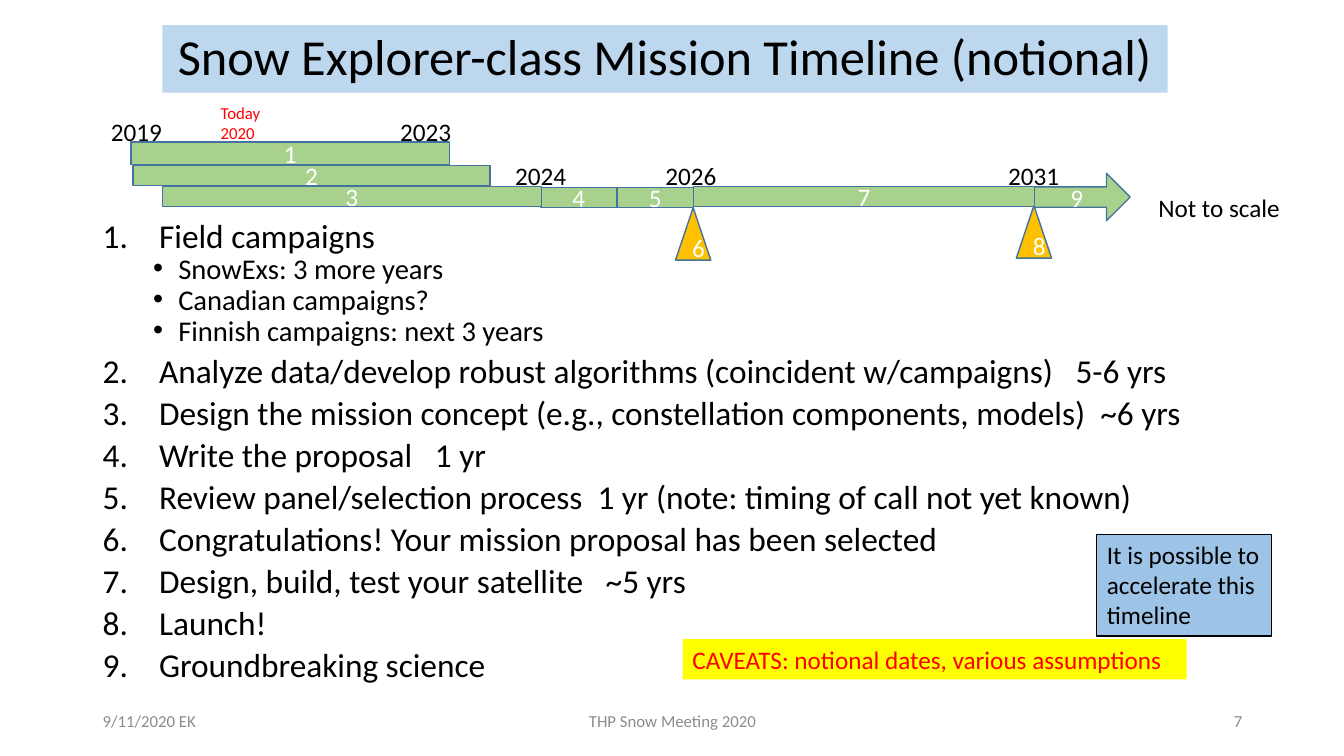
from dataclasses import dataclass

from lxml import etree
from pptx import Presentation
from pptx.dml.color import RGBColor
from pptx.enum.shapes import MSO_SHAPE
from pptx.enum.text import MSO_ANCHOR, MSO_AUTO_SIZE, PP_ALIGN
from pptx.oxml.ns import qn
from pptx.util import Pt

EMU_PER_PX = 9144  # 100 px to the inch
FONT = "Calibri"
BLACK, WHITE, RED, GREY = "000000", "FFFFFF", "FF0000", "8C8C8C"
GREEN, GOLD, OUTLINE = "A9D18E", "FFC000", "43739E"
RECTANGLE = MSO_SHAPE.RECTANGLE
TRIANGLE = MSO_SHAPE.ISOSCELES_TRIANGLE
ARROW = MSO_SHAPE.RIGHT_ARROW
LEFT, CENTER, RIGHT = PP_ALIGN.LEFT, PP_ALIGN.CENTER, PP_ALIGN.RIGHT
MIDDLE, TOP = MSO_ANCHOR.MIDDLE, MSO_ANCHOR.TOP
FIT_SHAPE, FIXED = MSO_AUTO_SIZE.SHAPE_TO_FIT_TEXT, MSO_AUTO_SIZE.NONE


@dataclass
class Box:
    left: int
    top: int
    width: int
    height: int

    def emu(self) -> list[int]:
        return [px(n) for n in (self.left, self.top, self.width, self.height)]


@dataclass
class Phase:
    number: str
    box: Box
    kind: int = RECTANGLE
    fill: str = GREEN


@dataclass
class Label:
    text: str
    box: Box
    size: int = 18
    color: str = BLACK
    align: int = LEFT
    anchor: int = TOP
    wrap: bool = False


@dataclass
class Callout:
    label: Label
    fill: str
    line: str | None = None


@dataclass
class Step:
    text: str
    details: tuple[str, ...] = ()


TITLE = "Snow Explorer-class Mission Timeline (notional)"
PHASES = [
    Phase("2", Box(132, 164, 354, 20)),
    Phase("4", Box(536, 186, 76, 20)),
    Phase("6", Box(670, 206, 35, 52), TRIANGLE, GOLD),
    Phase("8", Box(1008, 204, 35, 52), TRIANGLE, GOLD),
    Phase("9", Box(1025, 172, 96, 47), ARROW),
    Phase("1", Box(130, 141, 316, 22)),
    Phase("3", Box(161, 185, 376, 20)),
    Phase("5", Box(612, 186, 76, 20)),
    Phase("7", Box(688, 185, 338, 20)),
]
YEARS = [("2019", 100, 111), ("2023", 387, 111), ("2024", 501, 154),
         ("2026", 650, 154), ("2031", 990, 154)]
LABELS = [Label(year, Box(left, top, 71, 40)) for year, left, top in YEARS] + [
    Label("Not to scale", Box(1139, 186, 142, 40)),
    Label("Today\n2020", Box(209, 97, 60, 54), 12, RED),
]
FOOTERS = [
    Label(text, Box(left, 695, width, 40), 12, GREY, align, MIDDLE, True)
    for text, left, width, align in (
        ("9/11/2020 EK", 92, 300, LEFT),
        ("THP Snow Meeting 2020", 442, 450, CENTER),
        ("7", 942, 300, RIGHT),
    )
]
CALLOUTS = [
    Callout(Label("It is possible to\naccelerate this\ntimeline",
                  Box(1088, 530, 173, 101)), "9DC3E6", BLACK),
    Callout(Label("CAVEATS: notional dates, various assumptions",
                  Box(677, 634, 500, 40), color=RED, wrap=True), "FFFF00"),
]
STEPS = [
    Step("Field campaigns", ("SnowExs: 3 more years", "Canadian campaigns?",
                             "Finnish campaigns: next 3 years")),
    Step("Analyze data/develop robust algorithms (coincident w/campaigns)   5-6 yrs"),
    Step("Design the mission concept (e.g., constellation components, models)  ~6 yrs"),
    Step("Write the proposal   1 yr"),
    Step("Review panel/selection process  1 yr (note: timing of call not yet known)"),
    Step("Congratulations! Your mission proposal has been selected"),
    Step("Design, build, test your satellite   ~5 yrs"),
    Step("Launch!"),
    Step("Groundbreaking science"),
]


def px(length: int) -> int:
    return length * EMU_PER_PX


def rgb(color: str) -> RGBColor:
    return RGBColor.from_string(color)


def format_text(text_frame, size: float, color: str, align: int) -> None:
    for paragraph in text_frame.paragraphs:
        paragraph.alignment = align
        for run in paragraph.runs:
            run.font.size = Pt(size)
            run.font.name = FONT
            run.font.color.rgb = rgb(color)


def write_label(shape, label: Label) -> None:
    text_frame = shape.text_frame
    text_frame.text = label.text
    text_frame.word_wrap = label.wrap
    text_frame.vertical_anchor = label.anchor
    text_frame.auto_size = FIXED if label.anchor == MIDDLE else FIT_SHAPE
    format_text(text_frame, label.size, label.color, label.align)


def add_label(slide, label: Label) -> None:
    write_label(slide.shapes.add_textbox(*label.box.emu()), label)


def add_filled(slide, kind: int, box: Box, fill: str, line: str | None, weight: float):
    shape = slide.shapes.add_shape(kind, *box.emu())
    shape.shadow.inherit = False
    shape.fill.solid()
    shape.fill.fore_color.rgb = rgb(fill)
    if line:
        shape.line.color.rgb = rgb(line)
        shape.line.width = Pt(weight)
    else:
        shape.line.fill.background()
    return shape


def add_phase(slide, phase: Phase) -> None:
    shape = add_filled(slide, phase.kind, phase.box, phase.fill, OUTLINE, 1)
    if phase.kind == ARROW:
        shape.adjustments[0] = 0.43
    shape.text_frame.text = phase.number
    format_text(shape.text_frame, 18, WHITE, CENTER)


def add_callout(slide, callout: Callout) -> None:
    shape = add_filled(slide, RECTANGLE, callout.label.box, callout.fill, callout.line, 0.75)
    write_label(shape, callout.label)


def add_item(paragraph, text: str, level: int, first: bool) -> None:
    paragraph.text = text
    paragraph.level = level
    paragraph.line_spacing = 0.7
    paragraph.space_before = Pt(0 if first else 5 if level else 10)
    indent, hanging = (75, 25) if level else (56, 56)
    properties = paragraph._p.get_or_add_pPr()
    properties.set("marL", str(px(indent)))
    properties.set("indent", str(-px(hanging)))
    if level:
        etree.SubElement(properties, qn("a:buFont"), typeface="Arial")
        etree.SubElement(properties, qn("a:buChar"), char="•")
    else:
        etree.SubElement(properties, qn("a:buAutoNum"), type="arabicPeriod")
    run = paragraph.runs[0]
    run.font.size = Pt(20.4 if level else 23.8)
    run.font.name = FONT
    run.font.color.rgb = rgb(BLACK)


def add_steps(slide) -> None:
    text_frame = slide.shapes.add_textbox(*Box(92, 219, 1150, 476).emu()).text_frame
    text_frame.word_wrap = True
    items = [(text, level) for step in STEPS
             for level, texts in enumerate(((step.text,), step.details)) for text in texts]
    for index, (text, level) in enumerate(items):
        paragraph = text_frame.add_paragraph() if index else text_frame.paragraphs[0]
        add_item(paragraph, text, level, index == 0)


def format_title(title) -> None:
    title.left, title.top, title.width, title.height = Box(161, 25, 997, 67).emu()
    title.fill.solid()
    title.fill.fore_color.rgb = rgb("BDD7EE")
    title.text_frame.text = TITLE
    title.text_frame.auto_size = FIXED
    title.text_frame.vertical_anchor = MIDDLE
    title.text_frame.paragraphs[0].line_spacing = 0.9
    format_text(title.text_frame, 36, BLACK, CENTER)


def main() -> None:
    presentation = Presentation()
    presentation.slide_width, presentation.slide_height = px(1333), px(750)
    slide = presentation.slides.add_slide(presentation.slide_layouts.get_by_name("Title Only"))
    format_title(slide.shapes.title)
    add_steps(slide)
    for phase in PHASES:
        add_phase(slide, phase)
    for label in LABELS + FOOTERS:
        add_label(slide, label)
    for callout in CALLOUTS:
        add_callout(slide, callout)
    presentation.save("out.pptx")


if __name__ == "__main__":
    main()
